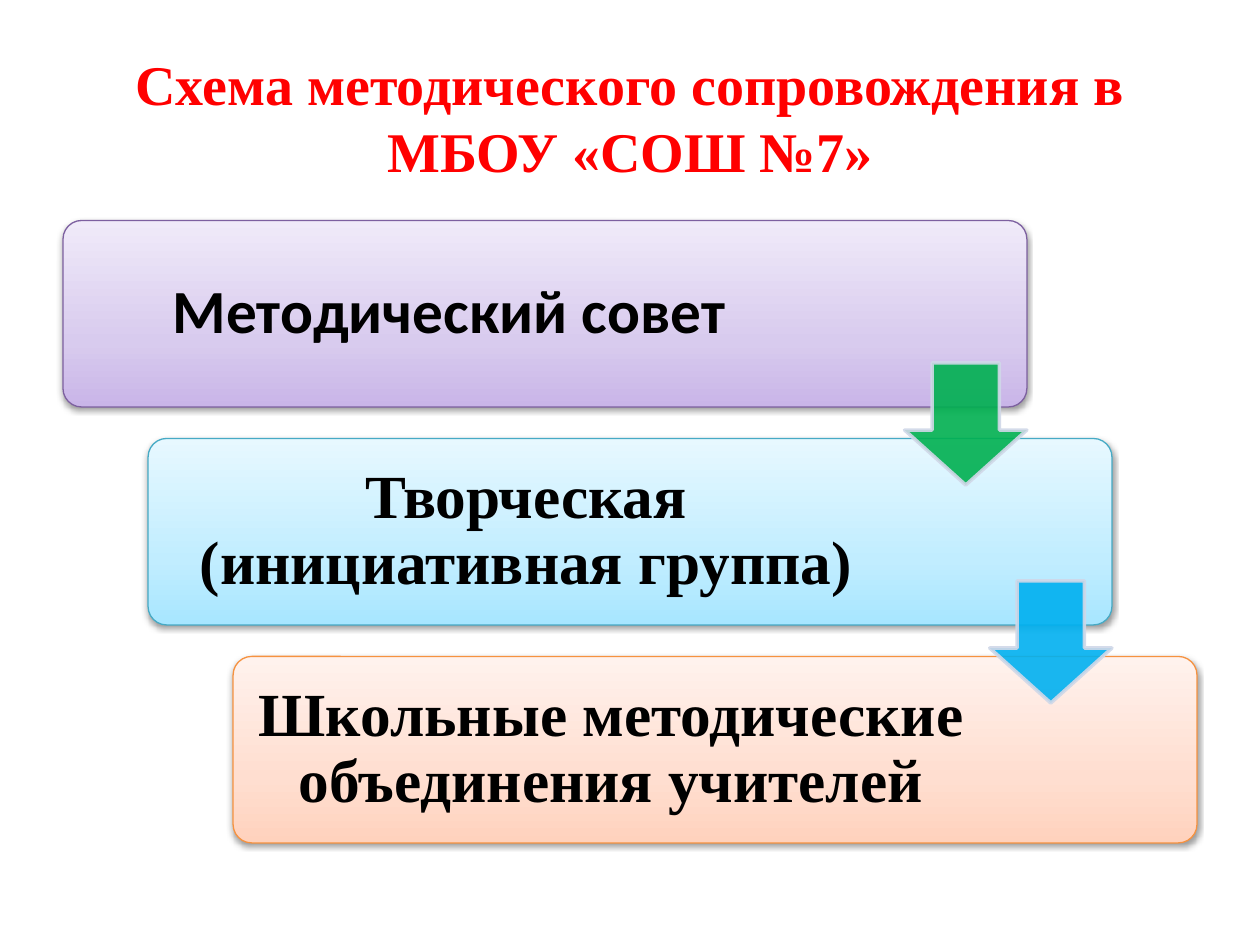
from dataclasses import dataclass

from lxml import etree
from pptx import Presentation
from pptx.dml.color import RGBColor
from pptx.enum.shapes import MSO_SHAPE
from pptx.enum.text import MSO_ANCHOR, PP_ALIGN
from pptx.oxml.ns import qn
from pptx.util import Inches, Pt

ROUNDED = MSO_SHAPE.ROUNDED_RECTANGLE
DOWN_ARROW = MSO_SHAPE.DOWN_ARROW
MIDDLE = MSO_ANCHOR.MIDDLE
CENTER = PP_ALIGN.CENTER

COLORS = {
    "title": "FF0000",
    "text": "000000",
    "shadow": "000000",
    "arrow_line": "D0D8E8",
    "green": "00B050",
    "blue": "00B0F0",
}

# Staircase grid, in inches
FIRST_LEFT, FIRST_TOP = 0.5, 1.75
STEP_RIGHT, STEP_DOWN = 0.675, 1.73
BOX_WIDTH, BOX_HEIGHT = 7.65, 1.48
TEXT_OFFSET = 0.04
ARROW_SIZE, ARROW_DROP = 0.97, 1.13


@dataclass
class Stage:
    text: str
    font: str
    text_width: float
    gradient: tuple[str, str, str]  # bottom, lower third, top
    line: str


STAGES = [
    Stage("Методический совет", "Calibri", 6.05,
          ("C9B5E8", "D8CBEE", "F0EAF9"), "7D60A0"),
    Stage("Творческая (инициативная группа)", "Times New Roman", 5.92,
          ("A7E6FF", "C1EDFF", "E7F8FF"), "46AAC5"),
    Stage("Школьные методические объединения учителей", "Times New Roman", 5.92,
          ("FFD2BD", "FFDED0", "FFF2ED"), "F69240"),
]
ARROW_COLORS = ["green", "blue"]


def add_child(parent, tag: str, **attributes):
    return etree.SubElement(parent, qn(tag), {k: str(v) for k, v in attributes.items()})


def write_text(shape, text: str, *, font: str, size: float, color: str,
               line_spacing: float = 1.0) -> None:
    frame = shape.text_frame
    frame.word_wrap = True
    frame.vertical_anchor = MIDDLE
    paragraph = frame.paragraphs[0]
    paragraph.alignment = CENTER
    paragraph.line_spacing = line_spacing
    run = paragraph.add_run()
    run.text = text
    run.font.name = font
    run.font.size = Pt(size)
    run.font.bold = True
    run.font.color.rgb = RGBColor.from_string(color)


def set_gradient(shape, colors: tuple[str, str, str]) -> None:
    shape.fill.gradient()
    gradient = shape.fill._fill._gradFill
    stops = gradient.find(qn("a:gsLst"))
    for stop in list(stops):
        stops.remove(stop)
    for position, color in zip((0, 35000, 100000), colors):
        stop = add_child(stops, "a:gs", pos=position)
        add_child(stop, "a:srgbClr", val=color)
    gradient.find(qn("a:lin")).set("ang", str(270 * 60000))


def add_shadow(shape) -> None:
    effects = shape._element.spPr.find(qn("a:effectLst"))
    shadow = add_child(effects, "a:outerShdw", blurRad=Pt(3.1), dist=Pt(1.6),
                       dir=90 * 60000, rotWithShape=0)
    color = add_child(shadow, "a:srgbClr", val=COLORS["shadow"])
    add_child(color, "a:alpha", val=38000)


def add_outlined(slide, kind, left: float, top: float, width: float, height: float,
                 *, line: str, line_width: float, adjustments: tuple[float, ...]):
    shape = slide.shapes.add_shape(kind, Inches(left), Inches(top),
                                   Inches(width), Inches(height))
    shape.shadow.inherit = False
    shape.line.color.rgb = RGBColor.from_string(line)
    shape.line.width = Pt(line_width)
    for index, value in enumerate(adjustments):
        shape.adjustments[index] = value
    return shape


def add_stage(slide, stage: Stage, row: int) -> None:
    left, top = FIRST_LEFT + row * STEP_RIGHT, FIRST_TOP + row * STEP_DOWN
    box = add_outlined(slide, ROUNDED, left, top, BOX_WIDTH, BOX_HEIGHT,
                       line=stage.line, line_width=0.75, adjustments=(0.1,))
    set_gradient(box, stage.gradient)
    add_shadow(box)

    label = slide.shapes.add_textbox(
        Inches(left + TEXT_OFFSET), Inches(top + TEXT_OFFSET),
        Inches(stage.text_width), Inches(BOX_HEIGHT - 2 * TEXT_OFFSET))
    frame = label.text_frame
    frame.margin_left = frame.margin_right = Inches(0.15)
    frame.margin_top = frame.margin_bottom = Inches(0.15)
    write_text(label, stage.text, font=stage.font, size=35,
               color=COLORS["text"], line_spacing=0.9)


def add_arrow(slide, color: str, row: int) -> None:
    left = FIRST_LEFT + row * STEP_RIGHT + BOX_WIDTH - ARROW_SIZE
    top = FIRST_TOP + row * STEP_DOWN + ARROW_DROP
    arrow = add_outlined(slide, DOWN_ARROW, left, top, ARROW_SIZE, ARROW_SIZE,
                         line=COLORS["arrow_line"], line_width=2,
                         adjustments=(0.55, 0.45))
    arrow.fill.solid()
    arrow.fill.fore_color.rgb = RGBColor.from_string(color)
    # Fill and line are both 90% opaque
    for rgb in arrow._element.spPr.iter(qn("a:srgbClr")):
        add_child(rgb, "a:alpha", val=90000)


def main() -> None:
    presentation = Presentation()
    presentation.slide_width = Inches(10)
    presentation.slide_height = Inches(7.5)
    slide = presentation.slides.add_slide(presentation.slide_layouts[5])

    # Title
    title = slide.shapes.title
    title.left, title.top = Inches(0.5), Inches(0.3)
    title.width, title.height = Inches(9), Inches(1.25)
    write_text(title, "Схема методического сопровождения в МБОУ «СОШ №7»",
               font="Times New Roman", size=32, color=COLORS["title"])

    # Stages, then the arrows that lie over them
    for row, stage in enumerate(STAGES):
        add_stage(slide, stage, row)
    for row, name in enumerate(ARROW_COLORS):
        add_arrow(slide, COLORS[name], row)

    presentation.save("out.pptx")


if __name__ == "__main__":
    main()
